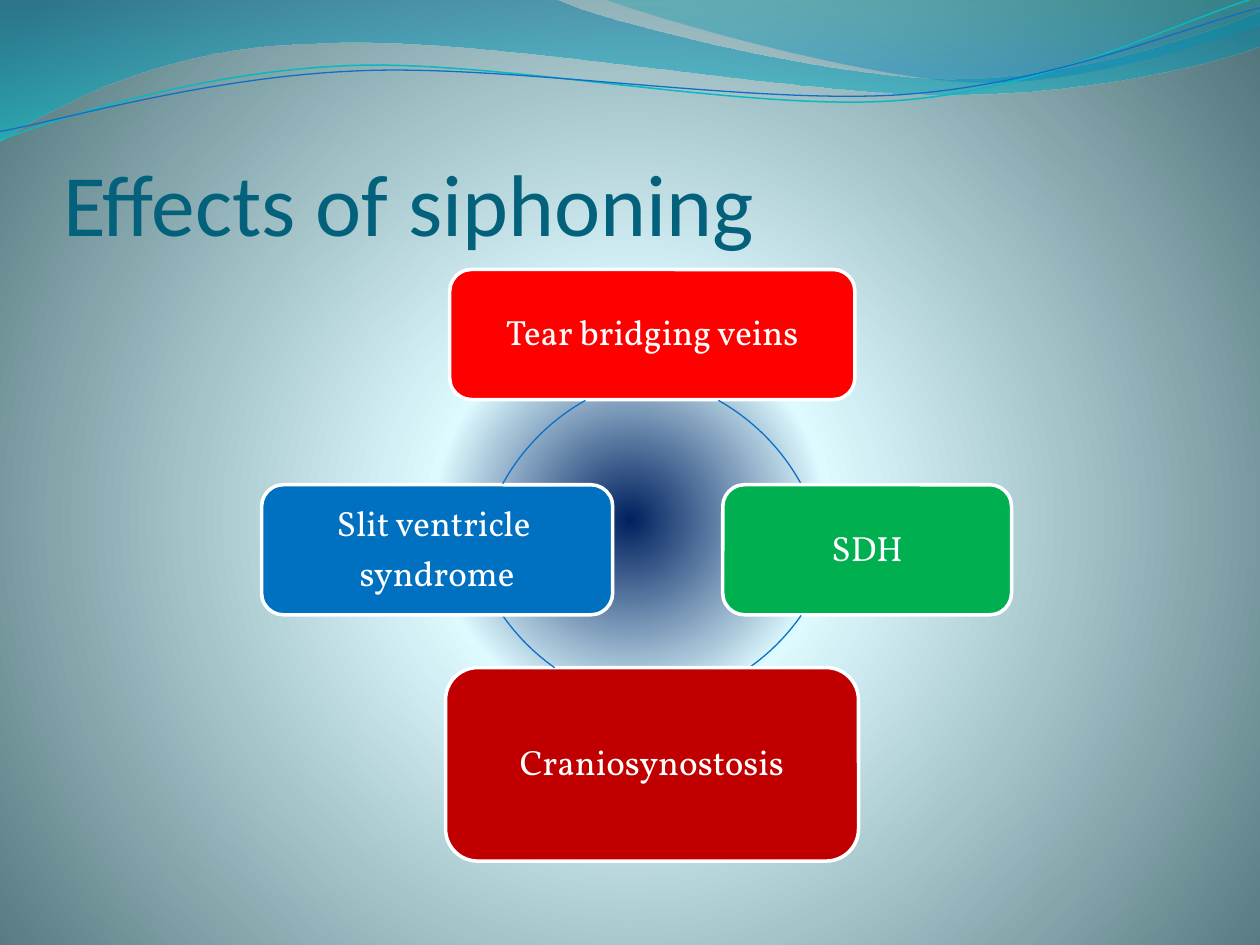
from lxml.etree import SubElement
from pptx import Presentation
from pptx.dml.color import RGBColor
from pptx.enum.shapes import MSO_SHAPE
from pptx.enum.text import MSO_ANCHOR, MSO_AUTO_SIZE, PP_ALIGN
from pptx.oxml.ns import qn
from pptx.util import Pt

COLORS = {
    "title": "04617B", "white": "FFFFFF", "ring": "0F6FC6", "teal line": "0AB8BF",
    "red": "FF0000", "green": "00B050", "dark red": "C00000", "blue": "0070C0",
    "navy": "002060", "pale": "DDFAFF", "slate": "52767C",
    "wave blue": "0074A1", "wave teal": "00C6CF",
    "crest teal": "00A1A9", "crest blue": "008BBF",
}


def color(name):
    return RGBColor.from_string(COLORS[name])


def set_stops(properties, stops):
    """Refill the gradient with (position %, colour, opacity %) stops."""
    gradient = properties.find(qn("a:gradFill"))
    gradient.clear()
    stop_list = SubElement(gradient, qn("a:gsLst"))
    for position, name, opacity in stops:
        stop = SubElement(stop_list, qn("a:gs"), pos=str(position * 1000))
        rgb = SubElement(stop, qn("a:srgbClr"), val=COLORS[name])
        if opacity < 100:
            SubElement(rgb, qn("a:alpha"), val=str(opacity * 1000))
    return gradient


class Deck:
    title_font, title_size = "Calibri", Pt(50)
    box_font, box_size = "Vollkorn", Pt(20)

    def __init__(self):
        self.presentation = Presentation()
        self.presentation.slide_width = Pt(720)
        self.presentation.slide_height = Pt(540)
        self.slide = self.presentation.slides.add_slide(self.presentation.slide_layouts[5])

    def background(self, stops):
        self.slide.background.fill.gradient()
        gradient = set_stops(self.slide.element.find(".//" + qn("p:bgPr")), stops)
        radial = SubElement(gradient, qn("a:path"), path="circle")
        SubElement(radial, qn("a:fillToRect"), l="10000", t="110000", r="10000", b="100000")

    def outline(self, start, segments, close):
        """Draw lines (x, y) and cubic curves (two handles and an end, 6 numbers)."""
        points = [(Pt(segment[i]), Pt(segment[i + 1]))
                  for segment in segments for i in range(0, len(segment), 2)]
        builder = self.slide.shapes.build_freeform(Pt(start[0]), Pt(start[1]))
        builder.add_line_segments(points, close=close)
        shape = builder.convert_to_shape()
        shape.shadow.inherit = False
        # Join each curve's three vertices into one Bézier segment
        vertices = iter(list(shape.element.iter(qn("a:lnTo"))))
        for segment in segments:
            vertex = next(vertices)
            if len(segment) == 6:
                vertex.tag = qn("a:cubicBezTo")
                for _ in range(2):
                    extra = next(vertices)
                    vertex.append(extra[0])
                    extra.getparent().remove(extra)
        return shape

    def wave(self, start, segments, stops):
        shape = self.outline(start, segments, close=True)
        shape.line.fill.background()
        shape.fill.gradient()
        gradient = set_stops(shape.element.spPr, stops)
        SubElement(gradient, qn("a:lin"), ang="5400000", scaled="1")

    def ripple(self, start, segments, name, width):
        shape = self.outline(start, segments, close=False)
        shape.rotation = 357.3
        shape.fill.background()
        shape.line.color.rgb = color(name)
        shape.line.width = Pt(width)

    def title(self, text, left, top, width, height):
        title = self.slide.shapes.title
        title.left, title.top, title.width, title.height = map(Pt, (left, top, width, height))
        self.slide.shapes.element.append(title.element)  # in front of the waves
        frame = title.text_frame
        frame.text = text
        frame.auto_size = MSO_AUTO_SIZE.NONE
        frame.vertical_anchor = MSO_ANCHOR.BOTTOM
        frame.margin_left = frame.margin_right = frame.margin_bottom = 0
        frame.margin_top = Pt(3.6)
        paragraph = frame.paragraphs[0]
        paragraph.alignment = PP_ALIGN.LEFT
        self.style(paragraph, self.title_font, self.title_size, "title")

    def style(self, paragraph, font_name, size, name):
        for run in paragraph.runs:
            run.font.name, run.font.size = font_name, size
            run.font.color.rgb = color(name)

    def box(self, text, left, top, width, height, name):
        box = self.slide.shapes.add_shape(
            MSO_SHAPE.ROUNDED_RECTANGLE, *map(Pt, (left, top, width, height)))
        box.shadow.inherit = False
        box.fill.solid()
        box.fill.fore_color.rgb = color(name)
        box.line.color.rgb = color("white")
        box.line.width = Pt(2)
        frame = box.text_frame
        frame.word_wrap = True
        frame.vertical_anchor = MSO_ANCHOR.MIDDLE
        frame.margin_left = frame.margin_right = frame.margin_top = frame.margin_bottom = Pt(6)
        frame.text = text
        for paragraph in frame.paragraphs:
            paragraph.alignment = PP_ALIGN.CENTER
            paragraph.line_spacing = 0.9
            paragraph.space_after = Pt(7)
            self.style(paragraph, self.box_font, self.box_size, "white")

    def arc(self, left, top, diameter, start, end):
        arc = self.slide.shapes.add_shape(
            MSO_SHAPE.ARC, *map(Pt, (left, top, diameter, diameter)))
        arc.shadow.inherit = False
        arc.fill.background()
        arc.line.color.rgb = color("ring")
        arc.line.width = Pt(0.75)
        # Angles are stored in 60000ths of a degree, adjustments in 100000ths
        arc.adjustments[0], arc.adjustments[1] = start * 0.6, end * 0.6


def main():
    deck = Deck()
    deck.background([(0, "navy", 100), (25, "pale", 100), (100, "slate", 100)])

    # Waves along the top edge
    deck.wave((0, -1), [
        (317, -1), (343, 12, 478, 45, 546, 45), (614, 45, 690, 19, 720, 6.5),
        (720.5, 26), (708, 32, 626, 55, 537, 54), (448, 54, 275, 20, 185, 24.5),
        (93, 25, 33, 60, -1, 81),
    ], [(0, "wave blue", 45), (100, "wave teal", 55)])
    deck.wave((345, -1), [
        (366, 8, 491, 44.5, 554, 47), (616, 50, 692, 23, 720, 15), (720, 0),
    ], [(0, "crest teal", 30), (80, "crest blue", 45)])
    deck.ripple((-1.4, 63.1), [
        (33.7, 51.7, 114.3, 29.4, 199.9, 30), (284.9, 30.5, 425.9, 67.2, 512.6, 64.7),
        (599.3, 62.3, 676.6, 25.9, 720.1, 15.5),
    ], "teal line", 0.85)
    deck.ripple((-1.1, 58.1), [
        (33.2, 53.7, 118.2, 32.6, 204.3, 33.2), (290.4, 33.2, 429.1, 63.3, 515.3, 61.4),
        (601.5, 59.4, 678.4, 30, 721.4, 21.5),
    ], "ring", 0.75)

    deck.title("Effects of siphoning", 36, 55.2, 654, 90)

    # Cycle of effects, each box followed by the arc that leaves it
    ring, box_height = 245.5, 74.3
    deck.box("Tear bridging veins", 257, 154, 231.5, box_height, "red")
    deck.arc(227.5, 213, ring, 299.4, 331.1)
    deck.box("SDH", 413, 277, 165, box_height, "green")
    deck.arc(234.5, 158.5, ring, 35, 54.8)
    deck.box("Craniosynostosis", 254.6, 381.5, 236, 110.6, "dark red")
    deck.arc(265, 158.5, ring, 125.2, 145)
    deck.box("Slit ventricle \nsyndrome", 149.5, 277, 200.6, box_height, "blue")
    deck.arc(272, 213, ring, 208.9, 240.6)

    deck.presentation.save("out.pptx")


if __name__ == "__main__":
    main()
